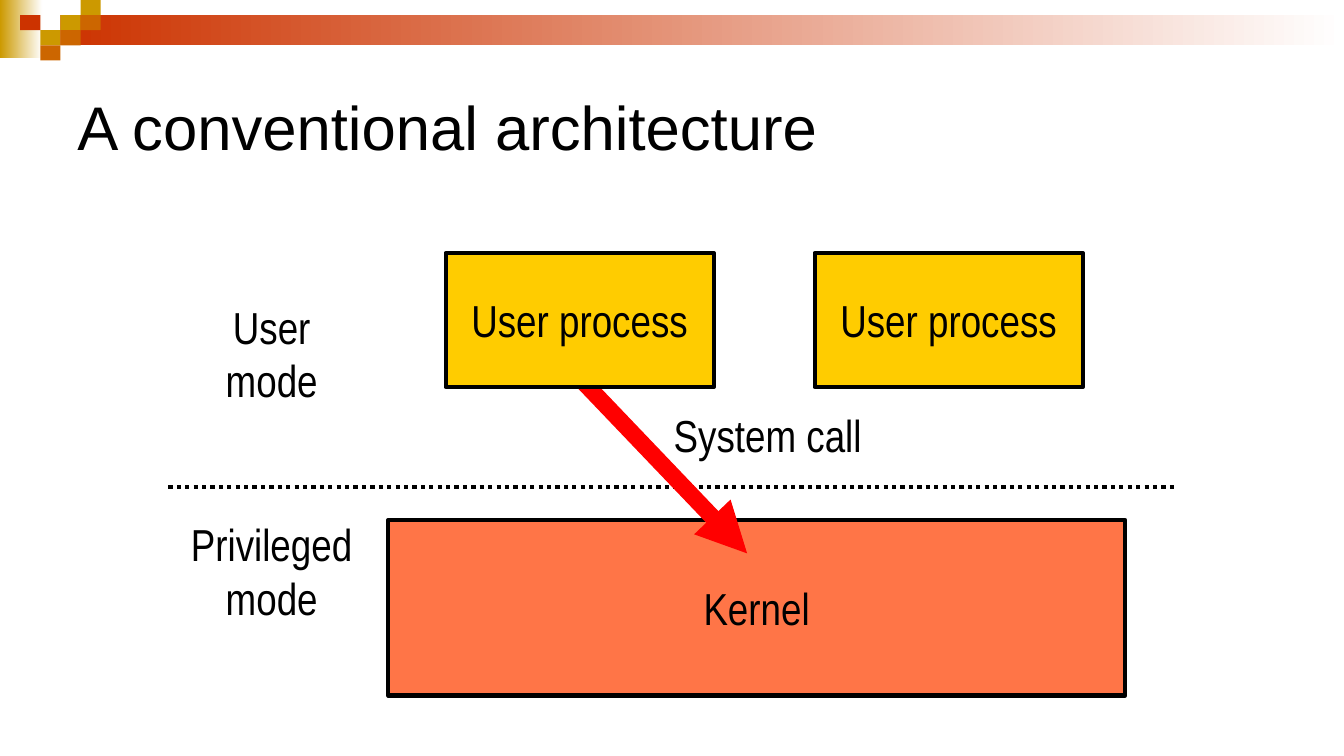
import pptx
import pptx.util
import pptx.dml.color
import pptx.enum.dml
import pptx.enum.shapes
import pptx.enum.text
import pptx.oxml.xmlchemy

Inches = pptx.util.Inches
Pt = pptx.util.Pt
MSO_SHAPE = pptx.enum.shapes.MSO_SHAPE
ANCHOR = pptx.enum.text.MSO_ANCHOR
ALIGN = pptx.enum.text.PP_ALIGN

COLORS = {
    "black": "000000",
    "white": "FFFFFF",
    "gold": "CC9900",
    "rust": "CC3300",
    "orange": "CC6600",
    "process": "FFCC00",
    "kernel": "FF7547",
    "call": "FF0000",
}


def rgb(name):
    """Return the palette colour called name."""
    return pptx.dml.color.RGBColor.from_string(COLORS[name])


def write(sp, lines, size=32, font="Arial Narrow", align=ALIGN.CENTER,
          anchor=ANCHOR.MIDDLE, wrap=False):
    """Fill a shape with one paragraph per line."""
    tf = sp.text_frame
    tf.word_wrap = wrap
    tf.vertical_anchor = anchor
    for i, line in enumerate(lines):
        p = tf.add_paragraph() if i else tf.paragraphs[0]
        p.alignment = align
        r = p.add_run()
        r.text = line
        r.font.size = Pt(size)
        r.font.name = font
        r.font.color.rgb = rgb("black")


def add_rect(s, box, color, fade=False, outline=False):
    """Add a rectangle, solid or fading to white, with an optional outline."""
    sp = s.shapes.add_shape(MSO_SHAPE.RECTANGLE, *map(Inches, box))
    sp.shadow.inherit = False
    if fade:
        sp.fill.gradient()
        sp.fill.gradient_angle = 0
        for stop, name, pos in zip(sp.fill.gradient_stops, (color, "white"), (0, 1)):
            stop.color.rgb = rgb(name)
            stop.position = pos
    else:
        sp.fill.solid()
        sp.fill.fore_color.rgb = rgb(color)
    if outline:
        sp.line.color.rgb = rgb("black")
        sp.line.width = Pt(3)
    else:
        sp.line.fill.background()
    return sp


def add_label(s, box, lines):
    """Add a centred text label."""
    sp = s.shapes.add_textbox(*map(Inches, box))
    write(sp, lines, anchor=ANCHOR.TOP)


def add_block(s, box, text, color):
    """Add an outlined block with its name in the middle."""
    write(add_rect(s, box, color, outline=True), [text])


def add_line(s, start, end, color, width):
    """Add a straight line without a shadow."""
    cn = s.shapes.add_connector(pptx.enum.shapes.MSO_CONNECTOR.STRAIGHT,
                                *map(Inches, start + end))
    cn.line.color.rgb = rgb(color)
    cn.line.width = Pt(width)
    cn._element.spPr.append(pptx.oxml.xmlchemy.OxmlElement("a:effectLst"))
    return cn


def draw_banner(s, x, y, w):
    """Draw the fading bar and the mosaic of small tiles."""
    tile_w, tile_h = 0.2, 0.15
    add_rect(s, (x, y, 0.42, 0.58), "gold", fade=True)
    add_rect(s, (x + 0.6, y + tile_h, w - 0.6, 2 * tile_h), "rust", fade=True)
    tiles = [(3, 1, "gold"), (4, 0, "gold"), (4, 1, "orange"), (2, 2, "gold"),
             (1, 1, "rust"), (3, 2, "orange"), (2, 3, "orange")]
    for col, row, color in tiles:
        add_rect(s, (x + col * tile_w, y + row * tile_h, tile_w, tile_h), color)


def draw_title(s, box, text):
    """Draw the slide title."""
    sp = s.shapes.add_textbox(*map(Inches, box))
    write(sp, [text], 44, "Arial", ALIGN.LEFT, wrap=True)


def draw_diagram(s, x, y, w):
    """Draw user processes above and the kernel below the mode boundary."""
    process_w, process_h = 2.66, 1.33
    left_x, right_x = x + 2.75, x + 6.41
    boundary = y + 2.32
    add_block(s, (x + 2.18, y + 2.65, 7.31, 1.74), "Kernel", "kernel")
    cn = add_line(s, (x, boundary), (x + w, boundary), "black", 3)
    cn.line.dash_style = pptx.enum.dml.MSO_LINE.ROUND_DOT
    add_label(s, (x + 0.12, y + 2.57, 1.81, 1.17), ["Privileged", "mode"])
    add_label(s, (x + 0.47, y + 0.41, 1.11, 1.17), ["User", "mode"])
    add_block(s, (right_x, y, process_w, process_h), "User process", "process")
    call = add_line(s, (x + 3.84, y + 0.99), (x + 5.74, y + 2.98), "call", 12)
    head = pptx.oxml.xmlchemy.OxmlElement("a:tailEnd")
    head.set("type", "triangle")
    call._element.spPr.get_or_add_ln().append(head)
    add_block(s, (left_x, y, process_w, process_h), "User process", "process")
    add_label(s, (x + 4.91, y + 1.49, 2.07, 0.63), ["System call"])


def main():
    """Build the slide and save it."""
    prs = pptx.Presentation()
    prs.slide_width = Inches(13.33)
    prs.slide_height = Inches(7.5)
    s = prs.slides.add_slide(prs.slide_layouts[6])
    draw_banner(s, 0, 0, 13.33)
    draw_diagram(s, 1.67, 2.51, 10)
    draw_title(s, (0.67, 0.5, 12, 1.5), "A conventional architecture")
    prs.save("out.pptx")


if __name__ == "__main__":
    main()
